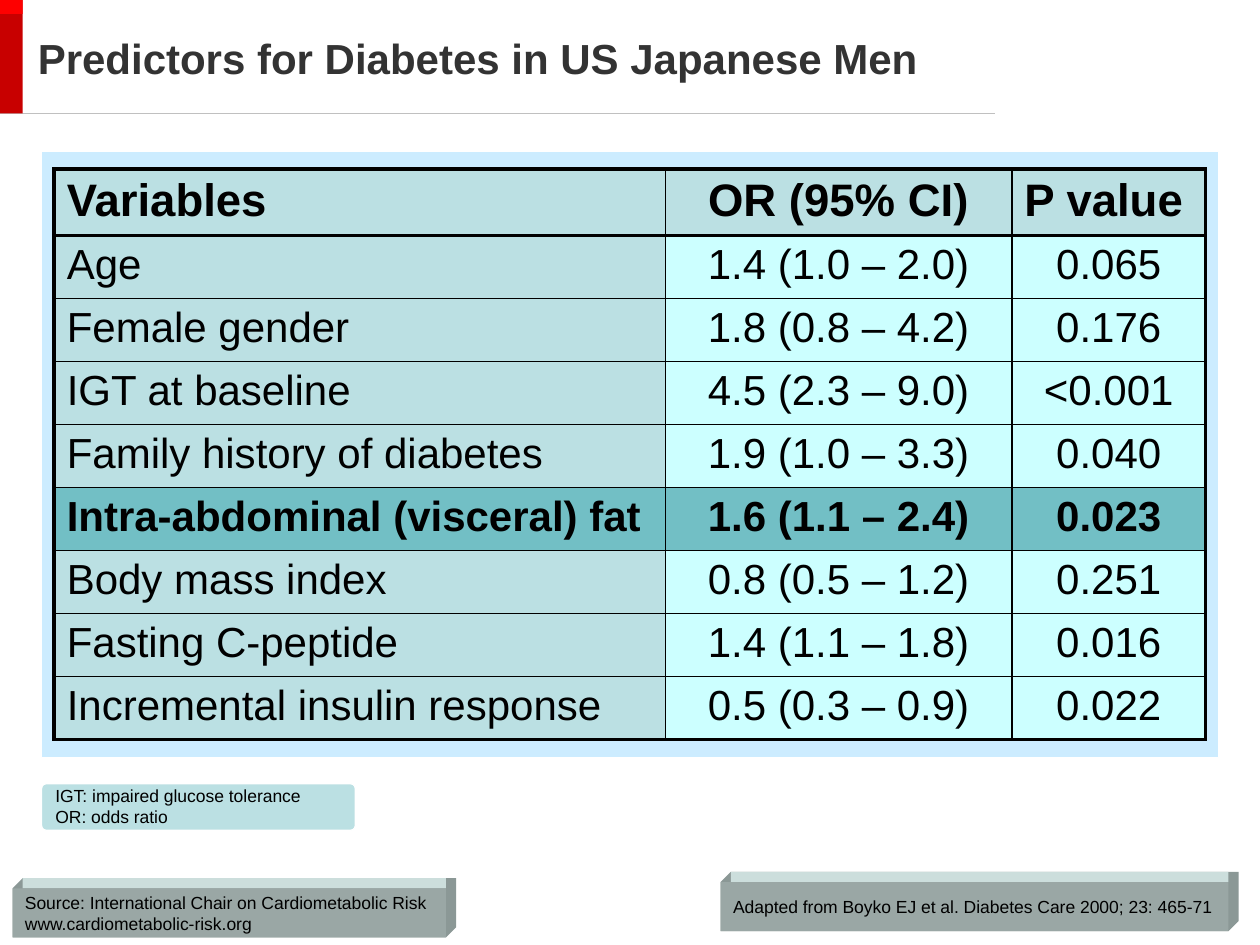
from lxml.etree import SubElement
from pptx import Presentation
from pptx.dml.color import RGBColor
from pptx.enum.shapes import MSO_CONNECTOR, MSO_SHAPE
from pptx.enum.text import MSO_ANCHOR, PP_ALIGN
from pptx.oxml.ns import qn
from pptx.util import Inches, Pt

COLORS = {
    "black": "000000", "title": "333333", "rule": "C0C0C0", "white": "FFFFFF",
    "red": "C80000", "bright_red": "FE0000", "panel": "CCECFF",
    "label": "BBE0E3", "value": "CCFFFF", "highlight": "72BFC5",
    "plate": "9AA7A5", "plate_side": "8B9896", "plate_top": "CCDEDC",
}
ROWS = [
    ("Variables", "OR (95% CI)", "P value"),
    ("Age", "1.4 (1.0 – 2.0)", "0.065"),
    ("Female gender", "1.8 (0.8 – 4.2)", "0.176"),
    ("IGT at baseline", "4.5 (2.3 – 9.0)", "<0.001"),
    ("Family history of diabetes", "1.9 (1.0 – 3.3)", "0.040"),
    ("Intra-abdominal (visceral) fat", "1.6 (1.1 – 2.4)", "0.023"),
    ("Body mass index", "0.8 (0.5 – 1.2)", "0.251"),
    ("Fasting C-peptide", "1.4 (1.1 – 1.8)", "0.016"),
    ("Incremental insulin response", "0.5 (0.3 – 0.9)", "0.022"),
]
COLUMN_WIDTHS = [4.85, 2.75, 1.54]
HIGHLIGHT_ROW = 5
PLATE_DEPTH = 0.08


def write(paragraph, text, size, color="black", bold=False, align=PP_ALIGN.LEFT):
    paragraph.alignment = align
    run = paragraph.add_run()
    run.text = text
    run.font.name = "Arial"
    run.font.size = Pt(size)
    run.font.bold = bold
    run.font.color.rgb = RGBColor.from_string(COLORS[color])


def add_block(left, top, width, height, fill, preset=MSO_SHAPE.RECTANGLE, line=None):
    block = slide.shapes.add_shape(
        preset, Inches(left), Inches(top), Inches(width), Inches(height))
    block.shadow.inherit = False
    block.fill.solid()
    block.fill.fore_color.rgb = RGBColor.from_string(COLORS[fill])
    if line:
        block.line.color.rgb = RGBColor.from_string(COLORS[line])
        block.line.width = Pt(0.75)
    else:
        block.line.fill.background()
    return block


prs = Presentation()
prs.slide_width, prs.slide_height = Inches(10), Inches(7.5)
slide = prs.slides.add_slide(prs.slide_layouts[5])

# Header
rule = slide.shapes.add_connector(
    MSO_CONNECTOR.STRAIGHT, Inches(0), Inches(0.9), Inches(7.9), Inches(0.9))
rule.line.color.rgb = RGBColor.from_string(COLORS["rule"])
rule.line.width = Pt(0.75)
SubElement(rule._element.spPr, qn("a:effectLst"))
add_block(0, 0, 0.18, 0.9, "red")
add_block(0, 0, 0.18, 0.11, "bright_red")

title = slide.shapes.title
title.left, title.top = Inches(0.2), Inches(0)
title.width, title.height = Inches(9.06), Inches(0.91)
title.text_frame.vertical_anchor = MSO_ANCHOR.MIDDLE
write(title.text_frame.paragraphs[0], "Predictors for Diabetes in US Japanese Men",
      24, "title", bold=True)

# Table of predictors
add_block(0.33, 1.2, 9.34, 4.81, "panel", line="white")
predictors = slide.shapes.add_table(
    len(ROWS), len(COLUMN_WIDTHS), Inches(0.43), Inches(1.34),
    Inches(sum(COLUMN_WIDTHS)), Inches(4.53)).table
for column, width in zip(predictors.columns, COLUMN_WIDTHS):
    column.width = Inches(width)

last_row, last_column = len(ROWS) - 1, len(COLUMN_WIDTHS) - 1
for r, row in enumerate(ROWS):
    predictors.rows[r].height = Inches(0.53 if r == 0 else 0.5)
    for c, text in enumerate(row):
        cell = predictors.cell(r, c)
        if r == HIGHLIGHT_ROW:
            fill = "highlight"
        else:
            fill = "label" if r == 0 or c == 0 else "value"
        centred = c == 1 or (c == 2 and r > 0)
        write(cell.text_frame.paragraphs[0], text, 26 if r == 0 else 24,
              bold=r in (0, HIGHLIGHT_ROW),
              align=PP_ALIGN.CENTER if centred else PP_ALIGN.LEFT)

        # Thick lines run around the table and under the header row
        thick_sides = {"lnL": c == 0, "lnR": c == last_column,
                       "lnT": r <= 1, "lnB": r in (0, last_row)}
        properties = cell._tc.get_or_add_tcPr()
        for side, thick in thick_sides.items():
            border = SubElement(properties, qn(f"a:{side}"),
                                w=str(Pt(2.25 if thick else 1)))
            solid = SubElement(border, qn("a:solidFill"))
            SubElement(solid, qn("a:srgbClr"), val=COLORS["black"])
        cell.fill.solid()
        cell.fill.fore_color.rgb = RGBColor.from_string(COLORS[fill])

# Source plates with a raised top and right side
for left, top, width, height, text in [
    (0.1, 7.05, 3.44, 0.39,
     "Source: International Chair on Cardiometabolic Risk www.cardiometabolic-risk.org"),
    (5.72, 7, 4.03, 0.39,
     "Adapted from Boyko EJ et al. Diabetes Care 2000; 23: 465-71"),
]:
    right, bottom, depth = left + width, top + height, PLATE_DEPTH
    outline = slide.shapes.build_freeform(Inches(left), Inches(top), scale=1.0)
    outline.add_line_segments([(Inches(x), Inches(y)) for x, y in [
        (left + depth, top - depth), (right + depth, top - depth),
        (right + depth, bottom - depth), (right, bottom), (left, bottom)]])
    sides = outline.convert_to_shape()
    sides.shadow.inherit = False
    sides.fill.solid()
    sides.fill.fore_color.rgb = RGBColor.from_string(COLORS["plate_side"])
    sides.line.fill.background()
    add_block(left + depth, top - depth, width - depth, depth, "plate_top")
    front = add_block(left, top, width, height, "plate")
    front.text_frame.word_wrap = True
    front.text_frame.vertical_anchor = MSO_ANCHOR.MIDDLE
    write(front.text_frame.paragraphs[0], text, 10)

# Abbreviations
key = add_block(0.33, 6.22, 2.49, 0.37, "label", MSO_SHAPE.ROUNDED_RECTANGLE, "white")
key.adjustments[0] = 0.105
key.text_frame.word_wrap = True
key.text_frame.vertical_anchor = MSO_ANCHOR.TOP
key.text_frame.margin_top = Inches(0)
write(key.text_frame.paragraphs[0], "IGT: impaired glucose tolerance", 10)
write(key.text_frame.add_paragraph(), "OR: odds ratio", 10)

prs.save("out.pptx")
